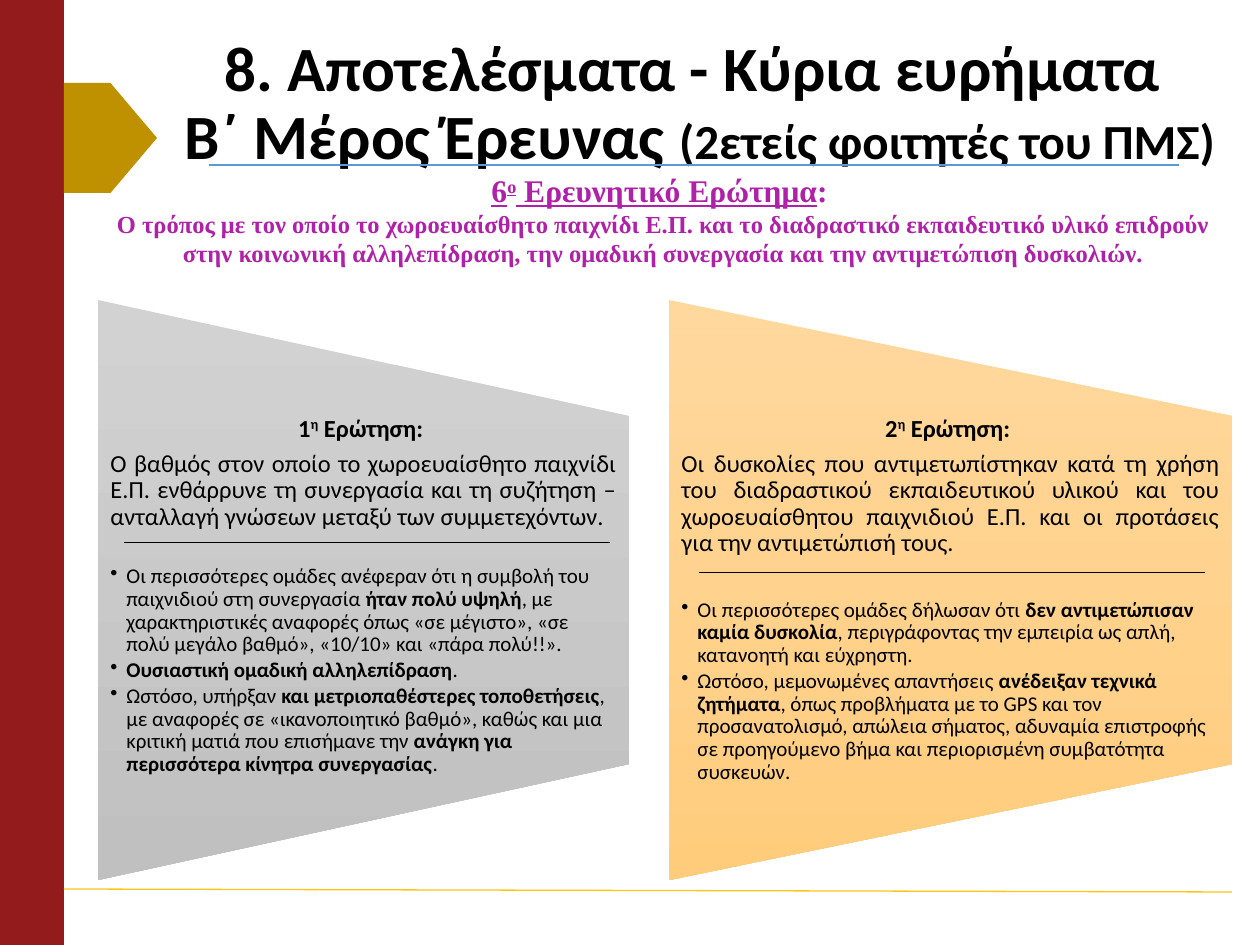
from dataclasses import dataclass

from lxml import etree
from pptx import Presentation
from pptx import util as u
from pptx.dml.color import RGBColor
from pptx.enum import shapes, text
from pptx.oxml.ns import qn

PX = u.Inches(1) / 126


@dataclass(frozen=True)
class Theme:
    band: str = "931B1B"
    tag: str = "BF9000"
    title_rule: str = "5B9BD5"
    foot_rule: str = "FFC61A"
    ink: str = "000000"
    accent: str = "AF21A8"
    grey: tuple = ("D2D2D2", "C0C0C0")
    orange: tuple = ("FFD89E", "FFCC7C")
    sans: str = "Calibri"
    serif: str = "Times New Roman"
    title: int = 36
    title_note: int = 28
    lead: int = 18
    body: int = 14
    bullet: int = 12


T = Theme()
ALIGN = text.PP_ALIGN

# Each bullet alternates plain and bold pieces, starting with plain.
PANELS = [
    dict(
        box=(98, 300, 531, 580), colours=T.grey, number="1", gap=15,
        rule=(124, 542, 610, 542),
        question="Ο βαθμός στον οποίο το χωροευαίσθητο παιχνίδι Ε.Π. ενθάρρυνε τη "
                 "συνεργασία και τη συζήτηση – ανταλλαγή γνώσεων μεταξύ των συμμετεχόντων.",
        bullets=[
            ["Οι περισσότερες ομάδες ανέφεραν ότι η συμβολή του παιχνιδιού στη συνεργασία ",
             "ήταν πολύ υψηλή",
             ", με χαρακτηριστικές αναφορές όπως «σε μέγιστο», «σε πολύ μεγάλο βαθμό», "
             "«10/10» και «πάρα πολύ!!»."],
            ["", "Ουσιαστική ομαδική αλληλεπίδραση", "."],
            ["Ωστόσο, υπήρξαν ", "και μετριοπαθέστερες τοποθετήσεις",
             ", με αναφορές σε «ικανοποιητικό βαθμό», καθώς και μια κριτική ματιά που "
             "επισήμανε την ",
             "ανάγκη για περισσότερα κίνητρα συνεργασίας", "."],
        ],
    ),
    dict(
        box=(669, 300, 563, 580), colours=T.orange, number="2", gap=19,
        rule=(699, 572, 1205, 572),
        question="Οι δυσκολίες που αντιμετωπίστηκαν κατά τη χρήση του διαδραστικού "
                 "εκπαιδευτικού υλικού και του χωροευαίσθητου παιχνιδιού Ε.Π. και οι "
                 "προτάσεις για την αντιμετώπισή τους.",
        bullets=[
            ["Οι περισσότερες ομάδες δήλωσαν ότι ", "δεν αντιμετώπισαν καμία δυσκολία",
             ", περιγράφοντας την εμπειρία ως απλή, κατανοητή και εύχρηστη."],
            ["Ωστόσο, μεμονωμένες απαντήσεις ", "ανέδειξαν τεχνικά ζητήματα",
             ", όπως προβλήματα με το GPS και τον προσανατολισμό, απώλεια σήματος, αδυναμία "
             "επιστροφής σε προηγούμενο βήμα και περιορισμένη συμβατότητα συσκευών."],
        ],
    ),
]


def px(*values):
    return [u.Emu(round(v * PX)) for v in values]


def set_all(obj, **values):
    for name, value in values.items():
        setattr(obj, name, value)


def add_run(p, words, size, colour=T.ink, name=T.sans, raised=False, **font):
    r = p.add_run()
    r.text = words
    set_all(r.font, size=u.Pt(size), name=name, **font)
    r.font.color.rgb = RGBColor.from_string(colour)
    if raised:
        r.font._element.set("baseline", "30000")


def add_paragraph(tf, **fmt):
    """Return the frame's unused first paragraph, or a new one, formatted."""
    first = tf.paragraphs[0]
    p = tf.add_paragraph() if first.runs else first
    set_all(p, **fmt)
    return p


def add_bullet(p):
    pPr = p._p.get_or_add_pPr()
    indent = px(16)[0]
    pPr.set("marL", str(indent))
    pPr.set("indent", str(-indent))
    etree.SubElement(pPr, qn("a:buChar")).set("char", "•")


def add_block(slide, kind, box, colour=None):
    sp = slide.shapes.add_shape(kind, *px(*box))
    sp.shadow.inherit = False
    sp.line.fill.background()
    if colour:
        sp.fill.solid()
        sp.fill.fore_color.rgb = RGBColor.from_string(colour)
    return sp


def add_rule(slide, ends, colour, width):
    line = slide.shapes.add_connector(shapes.MSO_CONNECTOR.STRAIGHT, *px(*ends))
    line.line.color.rgb = RGBColor.from_string(colour)
    line.line.width = u.Pt(width)
    etree.SubElement(line._element.spPr, qn("a:effectLst"))


def add_text_frame(slide, box, **fmt):
    tf = slide.shapes.add_textbox(*px(*box)).text_frame
    set_all(tf, word_wrap=True, **fmt)
    return tf


def add_title(slide):
    title = slide.shapes.title
    set_all(title, **dict(zip(("left", "top", "width", "height"), px(164, 66, 1071, 79))))
    tf = title.text_frame
    set_all(tf, word_wrap=True, auto_size=text.MSO_AUTO_SIZE.NONE,
            vertical_anchor=text.MSO_ANCHOR.MIDDLE)
    p = add_paragraph(tf, alignment=ALIGN.CENTER, line_spacing=0.9)
    add_run(p, "8. Αποτελέσματα - Κύρια ευρήματα ", T.title, bold=True)
    p.add_line_break()
    add_run(p, "Β΄ Μέρος Έρευνας ", T.title, bold=True)
    add_run(p, "(2ετείς φοιτητές του ΠΜΣ)", T.title_note, bold=True)


def add_research_question(slide):
    tf = add_text_frame(slide, (98, 165, 1131, 111))
    look = dict(colour=T.accent, name=T.serif, bold=True)
    p = add_paragraph(tf, alignment=ALIGN.CENTER)
    add_run(p, "6", T.lead, underline=True, **look)
    add_run(p, "ο", T.lead, underline=True, raised=True, **look)
    add_run(p, " Ερευνητικό Ερώτημα", T.lead, underline=True, **look)
    add_run(p, ": ", T.lead, **look)
    p = add_paragraph(tf, alignment=ALIGN.CENTER)
    add_run(p, "Ο τρόπος με τον οποίο το χωροευαίσθητο παιχνίδι Ε.Π. και το διαδραστικό "
               "εκπαιδευτικό υλικό επιδρούν στην κοινωνική αλληλεπίδραση, την ομαδική "
               "συνεργασία και την αντιμετώπιση δυσκολιών.", T.body, **look)


def add_trapezoid(slide, box, colours):
    """Turn the shape a quarter so that its wide side stands on the left."""
    x, y, w, h = box
    turned = (x + (w - h) / 2, y + (h - w) / 2, h, w)
    sp = add_block(slide, shapes.MSO_SHAPE.FLOWCHART_MANUAL_OPERATION, turned)
    sp.rotation = 270
    sp.fill.gradient()
    sp.fill.gradient_angle = 180
    for stop, colour in zip(sp.fill.gradient_stops, colours):
        stop.color.rgb = RGBColor.from_string(colour)


def add_panel(slide, box, colours, number, gap, rule, question, bullets):
    add_trapezoid(slide, box, colours)
    x, y, w, h = box
    tf = add_text_frame(slide, (x, y + h / 5, w, h * 3 / 5), margin_top=0, margin_bottom=0)
    spaced = dict(line_spacing=0.9, space_after=u.Pt(5))
    p = add_paragraph(tf, alignment=ALIGN.CENTER, **spaced)
    add_run(p, number, T.body, bold=True)
    add_run(p, "η", T.body, bold=True, raised=True)
    add_run(p, " Ερώτηση: ", T.body, bold=True)
    p = add_paragraph(tf, alignment=ALIGN.JUSTIFY, **spaced)
    add_run(p, question, T.body)
    for i, pieces in enumerate(bullets):
        p = add_paragraph(tf, line_spacing=0.9, space_after=u.Pt(1.8),
                          space_before=u.Pt(0 if i else gap))
        add_bullet(p)
        for j, words in enumerate(pieces):
            if words:
                add_run(p, words, T.bullet, bold=j % 2 == 1)
    add_rule(slide, rule, T.ink, 0.5)


def main():
    prs = Presentation()
    prs.slide_width, prs.slide_height = px(1260, 945)
    slide = prs.slides.add_slide(prs.slide_layouts[5])
    add_block(slide, shapes.MSO_SHAPE.RECTANGLE, (0, 0, 64, 945), T.band)
    add_rule(slide, (209, 165, 1179, 165), T.title_rule, 0.75)
    add_rule(slide, (64, 889, 1232, 892), T.foot_rule, 0.75)
    add_block(slide, shapes.MSO_SHAPE.PENTAGON, (64, 83, 93, 110), T.tag)
    add_title(slide)
    for panel in PANELS:
        add_panel(slide, **panel)
    add_research_question(slide)
    prs.save("out.pptx")


if __name__ == "__main__":
    main()
